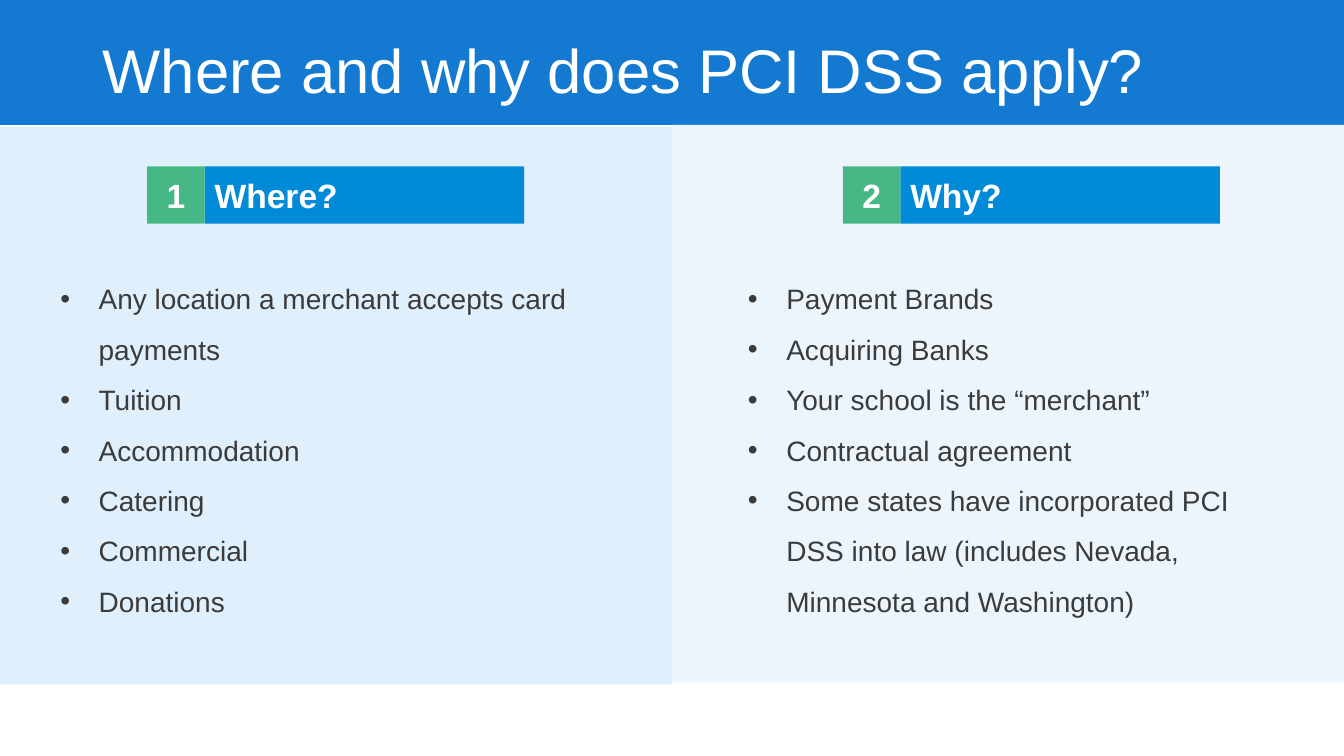
from lxml.etree import SubElement
from pptx import Presentation
from pptx.dml.color import RGBColor
from pptx.enum.shapes import MSO_SHAPE as SHAPE
from pptx.enum.text import MSO_ANCHOR as ANCHOR, MSO_AUTO_SIZE as AUTO, PP_ALIGN as ALIGN
from pptx.oxml.ns import qn
from pptx.util import Emu, Pt

PX = 9144  # 100 px to the inch
WIDTH, HEIGHT = 1333, 750

WHITE = RGBColor(0xFF, 0xFF, 0xFF)
BAND = RGBColor(0x13, 0x79, 0xD1)
LEFT_PANEL = RGBColor(0xE0, 0xEF, 0xFC)
RIGHT_PANEL = RGBColor(0xEC, 0xF5, 0xFC)
BLUE = RGBColor(0x00, 0x8A, 0xD8)
GREEN = RGBColor(0x46, 0xB8, 0x85)
INK = RGBColor(0x3B, 0x3B, 0x3B)

TITLE = "Where and why does PCI DSS apply?"
# number, heading, heading left, list left, list width, items
COLUMNS = [
    ("1", "Where?", 146, 50, 617, [
        "Any location a merchant accepts card payments",
        "Tuition",
        "Accommodation",
        "Catering",
        "Commercial",
        "Donations",
    ]),
    ("2", "Why?", 836, 732, 539, [
        "Payment Brands",
        "Acquiring Banks",
        "Your school is the “merchant”",
        "Contractual agreement",
        "Some states have incorporated PCI DSS into law "
        "(includes Nevada, Minnesota and Washington)",
    ]),
]


def px(n):
    return Emu(n * PX)


def set_all(obj, values):
    for name, value in values.items():
        setattr(obj, name, value)


class SlideBuilder:
    font = "Arial"
    heading = {"size": Pt(24), "bold": True}
    body = {"size": Pt(20)}
    indent = 38

    def __init__(self, slide):
        self.s = slide

    def frame(self, tf, inset_x=10, inset_y=10, anchor=ANCHOR.MIDDLE):
        set_all(tf, {
            "margin_left": px(inset_x), "margin_right": px(inset_x),
            "margin_top": px(inset_y), "margin_bottom": px(inset_y),
            "word_wrap": True, "auto_size": AUTO.NONE, "vertical_anchor": anchor,
        })

    def add_text(self, p, text, color, style, align=ALIGN.LEFT, spacing=1.0):
        set_all(p, {"alignment": align, "line_spacing": spacing})
        r = p.add_run()
        r.text = text
        set_all(r.font, {"name": self.font, **style})
        r.font.color.rgb = color

    def title(self, text, band, x, y, w, h):
        """Fill the title placeholder and lift it above its band."""
        sp = self.s.shapes.title
        set_all(sp, {"left": px(x), "top": px(y), "width": px(w), "height": px(h)})
        self.frame(sp.text_frame, inset_y=5)
        self.add_text(sp.text_frame.paragraphs[0], text, WHITE, {"size": Pt(44)}, spacing=0.9)
        sp.element.addprevious(band.element)

    def box(self, x, y, w, h, fill, text="", align=ALIGN.LEFT):
        sp = self.s.shapes.add_shape(SHAPE.RECTANGLE, px(x), px(y), px(w), px(h))
        sp.shadow.inherit = False
        sp.fill.solid()
        sp.fill.fore_color.rgb = fill
        sp.line.fill.background()
        if text:
            self.frame(sp.text_frame)
            self.add_text(sp.text_frame.paragraphs[0], text, WHITE, self.heading, align)
        return sp

    def bullet(self, p):
        pPr = p._p.get_or_add_pPr()
        pPr.set("marL", str(px(self.indent)))
        pPr.set("indent", str(-px(self.indent)))
        color = SubElement(pPr, qn("a:buClr"))
        SubElement(color, qn("a:srgbClr"), val=str(INK))
        SubElement(pPr, qn("a:buFont"), typeface=self.font)
        SubElement(pPr, qn("a:buChar"), char="•")

    def bullets(self, x, y, w, h, items):
        tf = self.s.shapes.add_textbox(px(x), px(y), px(w), px(h)).text_frame
        self.frame(tf, anchor=ANCHOR.TOP)
        for i, item in enumerate(items):
            p = tf.add_paragraph() if i else tf.paragraphs[0]
            self.bullet(p)
            self.add_text(p, item, INK, self.body, spacing=1.5)


def main():
    prs = Presentation()
    set_all(prs, {"slide_width": px(WIDTH), "slide_height": px(HEIGHT)})
    b = SlideBuilder(prs.slides.add_slide(prs.slide_layouts[5]))

    band = b.box(0, 0, WIDTH, 124, BAND)
    b.title(TITLE, band, 92, 29, 1150, 87)
    b.box(0, 126, 667, 553, LEFT_PANEL)
    b.box(667, 124, 666, 553, RIGHT_PANEL)

    badge = 57
    for number, heading, x, list_x, list_w, items in COLUMNS:
        b.box(x + badge, 165, 317, badge, BLUE, heading)
        b.box(x, 165, badge, badge, GREEN, number, ALIGN.CENTER)
        b.bullets(list_x, 253, list_w, 247, items)

    prs.save("out.pptx")


if __name__ == "__main__":
    main()
